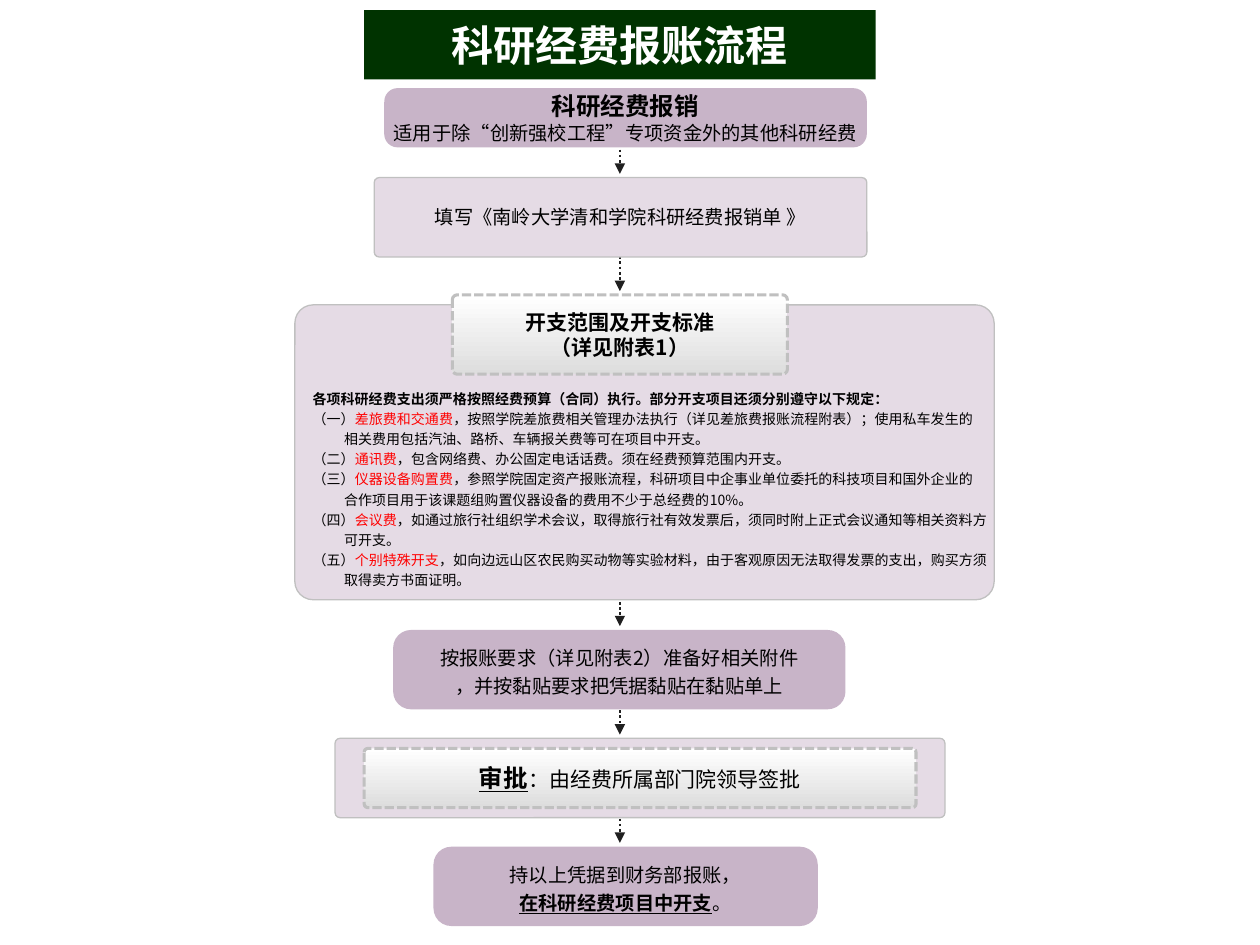
from lxml.etree import SubElement
from pptx import Presentation
from pptx.dml.color import RGBColor
from pptx.enum.dml import MSO_LINE
from pptx.enum.shapes import MSO_CONNECTOR, MSO_SHAPE
from pptx.enum.text import MSO_ANCHOR, MSO_AUTO_SIZE, PP_ALIGN
from pptx.oxml.ns import qn
from pptx.util import Inches, Pt

FONT = "Noto Sans CJK SC"
GREEN = RGBColor(0x00, 0x33, 0x00)
MAUVE = RGBColor(0xC8, 0xB4, 0xC8)
PALE = RGBColor(0xE5, 0xDB, 0xE5)
SILVER = RGBColor(0xC0, 0xC0, 0xC0)
GREY = RGBColor(0xDD, 0xDD, 0xDD)
DARK = RGBColor(0x20, 0x20, 0x20)
BLACK = RGBColor(0, 0, 0)
WHITE = RGBColor(0xFF, 0xFF, 0xFF)
RED = RGBColor(0xFF, 0, 0)

TITLE = "科研经费报账流程"
TITLE_BOX = (2.89, 0.08, 4.06, 0.55)

BODY = {"size": Pt(11)}
RULE = {"size": Pt(8)}
HEADING = {"size": Pt(12), "bold": True}
LEAD = {"size": Pt(14), "bold": True}

RULES = [
    ("（一）", "差旅费和交通费",
     "，按照学院差旅费相关管理办法执行（详见差旅费报账流程附表）；使用私车发生的",
     "相关费用包括汽油、路桥、车辆报关费等可在项目中开支。"),
    ("（二）", "通讯费", "，包含网络费、办公固定电话话费。须在经费预算范围内开支。", None),
    ("（三）", "仪器设备购置费",
     "，参照学院固定资产报账流程，科研项目中企事业单位委托的科技项目和国外企业的",
     "合作项目用于该课题组购置仪器设备的费用不少于总经费的10%。"),
    ("（四）", "会议费",
     "，如通过旅行社组织学术会议，取得旅行社有效发票后，须同时附上正式会议通知等相关资料方",
     "可开支。"),
    ("（五）", "个别特殊开支",
     "，如向边远山区农民购买动物等实验材料，由于客观原因无法取得发票的支出，购买方须",
     "取得卖方书面证明。"),
]
RULES_INTRO = "各项科研经费支出须严格按照经费预算（合同）执行。部分开支项目还须分别遵守以下规定："
CONTINUATION_INDENT = 0.25

STYLES = {
    "solid": {"fill": MAUVE, "corner": 0.225},
    "panel": {"fill": PALE, "corner": 0.062, "outline": 0.75},
    "label": {"corner": 0.062, "outline": 1.75, "dash": MSO_LINE.SQUARE_DOT},
}

STEPS = [
    ("solid", (3.05, 0.7, 3.83, 0.47), 1, [
        [("科研经费报销", LEAD)],
        [("适用于除“创新强校工程”专项资金外的其他科研经费", BODY)]]),
    ("panel", (2.97, 1.41, 3.91, 0.63), 1, [
        [("填写《南岭大学清和学院科研经费报销单 》", BODY)]]),
    ("solid", (3.44, 6.72, 3.05, 0.63), 1.2, [
        [("持以上凭据到财务部报账，", BODY)],
        [("在科研经费项目中开支", {**BODY, "bold": True, "underline": True}), ("。", BODY)]]),
    ("panel", (2.34, 2.42, 5.55, 2.34), 1.2, []),
    ("label", (3.59, 2.34, 2.66, 0.63), 1, [
        [("开支范围及开支标准", HEADING)],
        [("（详见附表1）", HEADING)]]),
    ("solid", (3.12, 5, 3.59, 0.63), 1.2, [
        [("按报账要求（详见附表2）准备好相关附件", BODY)],
        [("，并按黏贴要求把凭据黏贴在黏贴单上", BODY)]]),
    ("panel", (2.66, 5.86, 4.84, 0.63), 1, []),
    ("label", (2.89, 5.94, 4.38, 0.47), 1, [
        [("审批", {**LEAD, "underline": True}),
         ("：由经费所属部门院领导签批", {"size": Pt(12)})]]),
]
RULES_STEP = 3
ARROW_X, ARROW_LENGTH, ARROW_GAP = 4.92, 0.36, 0.03
ARROW_TARGETS = [1.41, 2.34, 5, 5.86, 6.72]


def add_run(paragraph, text, style, color=BLACK):
    run = paragraph.add_run()
    run.text = text
    for attribute, value in {"name": FONT, "bold": False, **style}.items():
        setattr(run.font, attribute, value)
    run.font.color.rgb = color
    SubElement(run.font._element, qn("a:ea"), typeface=FONT)


def write(frame, lines, spacing, align=PP_ALIGN.CENTER):
    for index, runs in enumerate(lines):
        paragraph = frame.paragraphs[0] if index == 0 else frame.add_paragraph()
        paragraph.alignment = align
        paragraph.line_spacing = spacing
        for run in runs:
            add_run(paragraph, *run)


def add_arrow(slide, target):
    tip = target - ARROW_GAP
    arrow = slide.shapes.add_connector(
        MSO_CONNECTOR.STRAIGHT, Inches(ARROW_X), Inches(tip - ARROW_LENGTH),
        Inches(ARROW_X), Inches(tip))
    arrow.line.color.rgb = DARK
    arrow.line.width = Pt(1.5)
    arrow.line.dash_style = MSO_LINE.ROUND_DOT
    SubElement(arrow.line._get_or_add_ln(), qn("a:tailEnd"), type="triangle")
    SubElement(arrow._element.spPr, qn("a:effectLst"))


def add_step(slide, kind, box, spacing, lines):
    style = STYLES[kind]
    step = slide.shapes.add_shape(MSO_SHAPE.ROUNDED_RECTANGLE, *map(Inches, box))
    step.shadow.inherit = False
    step.adjustments[0] = style["corner"]
    if "fill" in style:
        step.fill.solid()
        step.fill.fore_color.rgb = style["fill"]
    else:
        step.fill.gradient()
        step.fill.gradient_angle = 270
        for stop, color in zip(step.fill.gradient_stops, (WHITE, GREY)):
            stop.color.rgb = color
    if "outline" in style:
        step.line.color.rgb = SILVER
        step.line.width = Pt(style["outline"])
        step.line.dash_style = style.get("dash")
    else:
        step.line.fill.background()
    step.text_frame.word_wrap = False
    step.text_frame.vertical_anchor = MSO_ANCHOR.MIDDLE
    write(step.text_frame, lines, spacing)
    return step


def write_rules(frame):
    lines, continuations = [[(RULES_INTRO, {**RULE, "bold": True})]], []
    for number, topic, rule, rest in RULES:
        lines.append([(number, RULE), (topic, RULE, RED), (rule, RULE)])
        if rest:
            continuations.append(len(lines))
            lines.append([(rest, RULE)])
    frame.vertical_anchor = MSO_ANCHOR.BOTTOM
    write(frame, lines, 1.2, PP_ALIGN.LEFT)
    for index in continuations:
        properties = frame.paragraphs[index]._p.get_or_add_pPr()
        properties.set("marL", str(Inches(CONTINUATION_INDENT)))
        properties.set("indent", "0")


def format_title(title):
    title.left, title.top, title.width, title.height = map(Inches, TITLE_BOX)
    outline = SubElement(title._element.spPr, qn("a:prstGeom"), prst="roundRect")
    guides = SubElement(outline, qn("a:avLst"))
    SubElement(guides, qn("a:gd"), name="adj", fmla="val 22500")
    title.fill.solid()
    title.fill.fore_color.rgb = GREEN
    title.text_frame.auto_size = MSO_AUTO_SIZE.NONE
    title.text_frame.word_wrap = False
    title.text_frame.vertical_anchor = MSO_ANCHOR.MIDDLE
    write(title.text_frame, [[(TITLE, {"size": Pt(24), "bold": True}, WHITE)]], 1)


def main():
    deck = Presentation()
    deck.slide_width, deck.slide_height = Inches(10), Inches(7.5)
    slide = deck.slides.add_slide(deck.slide_layouts[5])
    format_title(slide.shapes.title)
    for target in ARROW_TARGETS:
        add_arrow(slide, target)
    steps = [add_step(slide, *step) for step in STEPS]
    write_rules(steps[RULES_STEP].text_frame)
    deck.save("out.pptx")


if __name__ == "__main__":
    main()
